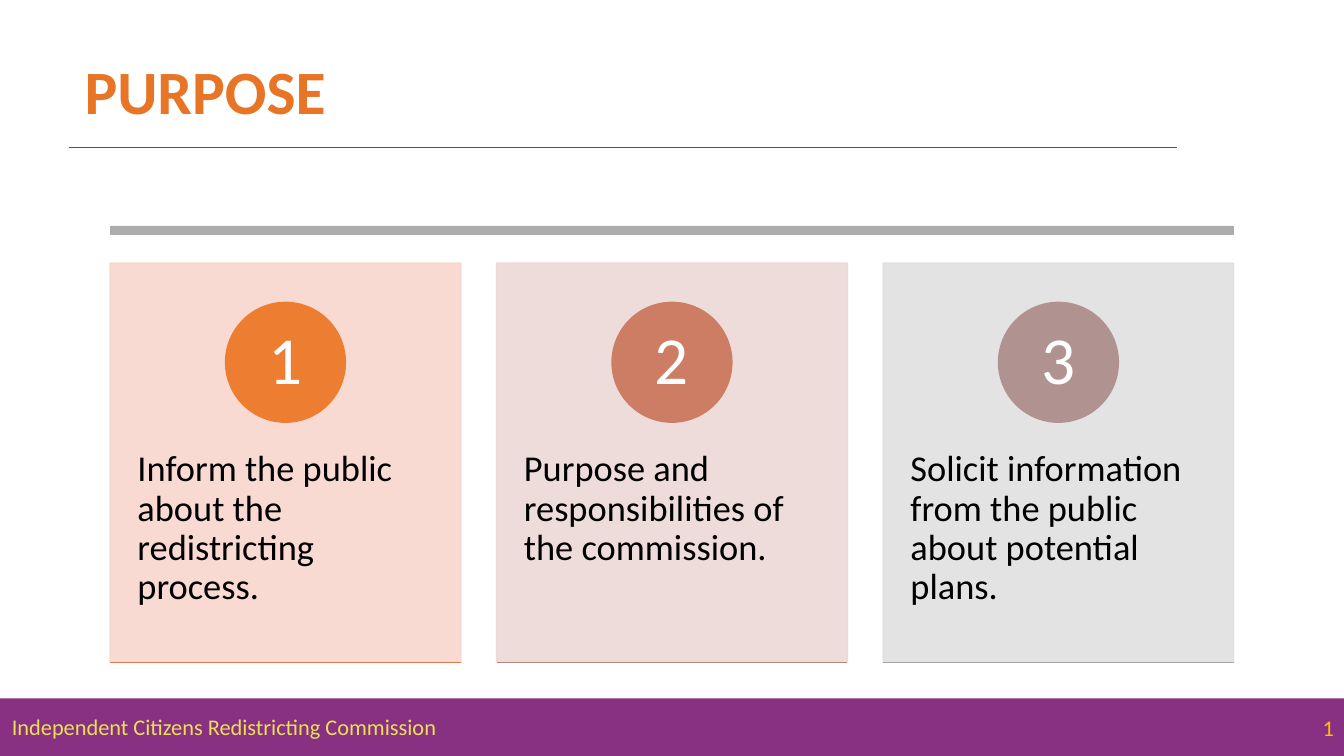
from dataclasses import dataclass

from lxml import etree
from pptx import Presentation
from pptx.dml.color import RGBColor
from pptx.enum import shapes, text
from pptx.oxml import ns
from pptx.util import Cm, Pt

TITLE = "PURPOSE"
FOOTER = "Independent Citizens Redistricting Commission"
PAGE_NUMBER = "3"
CARDS = [
    ("Inform the public about the redistricting process.", "F8D7CE", "ED7D31", "DC7A4B"),
    ("Purpose and responsibilities of the commission.", "EDD9D7", "CC7D64", "BD867B"),
    ("Solicit information from the public about potential plans.", "E1E1E1", "B09391", "A5A5A5"),
]


@dataclass(frozen=True)
class Theme:
    font: str = "Calibri"
    title: str = "E87425"
    band: str = "883182"
    footer: str = "EBDF57"
    number: str = "FFC000"
    strip: str = "808080"
    body: str = "000000"
    badge: str = "FFFFFF"
    title_size: int = 44
    body_size: int = 26
    badge_size: int = 48
    footer_size: int = 16


theme = Theme()
RECTANGLE = shapes.MSO_SHAPE.RECTANGLE
SLIDE_WIDTH, SLIDE_HEIGHT = 33.87, 19.05
CARD_WIDTH, CARD_HEIGHT, CARD_TOP, CARD_GAP = 8.84, 10.06, 6.63, 0.9
BADGE_SIZE, BADGE_TOP = 3.02, 7.62
BODY_TOP, BODY_HEIGHT = 10.44, 6.02
BAND_HEIGHT = 1.45
GRID_WIDTH = len(CARDS) * CARD_WIDTH + (len(CARDS) - 1) * CARD_GAP
GRID_LEFT = (SLIDE_WIDTH - GRID_WIDTH) / 2


def style_font(font, size, color, bold=False):
    font.name = theme.font
    font.size = Pt(size)
    font.bold = bold
    font.color.rgb = RGBColor.from_string(color)


def write(shape, words, size, color, bold=False, align=text.PP_ALIGN.LEFT,
          anchor=text.MSO_ANCHOR.TOP, insets=(0.25, 0.13), spacing=0.9):
    frame = shape.text_frame
    frame.word_wrap = True
    frame.vertical_anchor = anchor
    frame.margin_left = frame.margin_right = Cm(insets[0])
    frame.margin_top = frame.margin_bottom = Cm(insets[1])
    para = frame.paragraphs[0]
    para.alignment = align
    para.line_spacing = spacing
    span = para.add_run()
    span.text = words
    style_font(span.font, size, color, bold)
    return span


def set_opacity(fill_parent, percent):
    for color in fill_parent.iter(ns.qn("a:srgbClr")):
        etree.SubElement(color, ns.qn("a:alpha"), val=str(percent * 1000))


def add_block(page, kind, left, top, width, height, color, outlined=False, opacity=100):
    block = page.shapes.add_shape(kind, Cm(left), Cm(top), Cm(width), Cm(height))
    block.shadow.inherit = False
    block.fill.solid()
    block.fill.fore_color.rgb = RGBColor.from_string(color)
    if outlined:
        block.line.color.rgb = RGBColor.from_string(color)
        block.line.width = Pt(1)
    else:
        block.line.fill.background()
    if opacity < 100:
        set_opacity(block._element.spPr, opacity)
    return block


def add_rule(page, left, top, width, color, weight):
    rule = page.shapes.add_connector(
        shapes.MSO_CONNECTOR.STRAIGHT, Cm(left), Cm(top), Cm(left + width), Cm(top))
    rule.line.color.rgb = RGBColor.from_string(color)
    rule.line.width = Pt(weight)
    etree.SubElement(rule._element.spPr, ns.qn("a:effectLst"))


def add_textbox(page, left, top, width, height):
    return page.shapes.add_textbox(Cm(left), Cm(top), Cm(width), Cm(height))


def make_slide_number(span):
    element = span._r
    element.tag = ns.qn("a:fld")
    element.set("id", "{B6F15528-21DE-4FAA-801E-634DDDAF4B2B}")
    element.set("type", "slidenum")


def add_footer(page):
    top = SLIDE_HEIGHT - BAND_HEIGHT
    band = add_block(page, RECTANGLE, 0, top, SLIDE_WIDTH, BAND_HEIGHT, theme.band)
    span = write(band, PAGE_NUMBER, theme.footer_size, theme.number,
                 align=text.PP_ALIGN.RIGHT, anchor=text.MSO_ANCHOR.MIDDLE, spacing=1.0)
    make_slide_number(span)
    box = add_textbox(page, 0.05, 17.83, 13.11, 0.94)
    write(box, FOOTER, theme.footer_size, theme.footer, spacing=1.0)


def add_title(page):
    title = page.shapes.title
    title.left, title.top, title.width, title.height = Cm(1.88), Cm(0.53), Cm(29.03), Cm(3.68)
    write(title, TITLE, theme.title_size, theme.title, bold=True, anchor=text.MSO_ANCHOR.MIDDLE)


def add_card(page, index, words, tint, badge_color, edge):
    left = GRID_LEFT + index * (CARD_WIDTH + CARD_GAP)
    add_block(page, RECTANGLE, left, CARD_TOP, CARD_WIDTH, CARD_HEIGHT, tint, True, 90)
    body = add_textbox(page, left, BODY_TOP, CARD_WIDTH, BODY_HEIGHT)
    write(body, words, theme.body_size, theme.body, insets=(0.69, 0.91))
    badge = add_block(page, shapes.MSO_SHAPE.OVAL, left + (CARD_WIDTH - BADGE_SIZE) / 2,
                      BADGE_TOP, BADGE_SIZE, BADGE_SIZE, badge_color, True)
    write(badge, str(index + 1), theme.badge_size, theme.badge, align=text.PP_ALIGN.CENTER,
          anchor=text.MSO_ANCHOR.MIDDLE, insets=(0.23, 0.03))
    add_rule(page, left, CARD_TOP + CARD_HEIGHT, CARD_WIDTH, edge, 1)


def main():
    deck = Presentation()
    deck.slide_width, deck.slide_height = Cm(SLIDE_WIDTH), Cm(SLIDE_HEIGHT)
    page = deck.slides.add_slide(deck.slide_layouts.get_by_name("Title Only"))
    add_footer(page)
    add_rule(page, 1.73, 3.71, 27.94, theme.band, 0.5)
    add_title(page)
    add_block(page, RECTANGLE, GRID_LEFT, 5.69, GRID_WIDTH, 0.23, theme.strip, opacity=65)
    for index, card in enumerate(CARDS):
        add_card(page, index, *card)
    deck.save("out.pptx")


if __name__ == "__main__":
    main()
